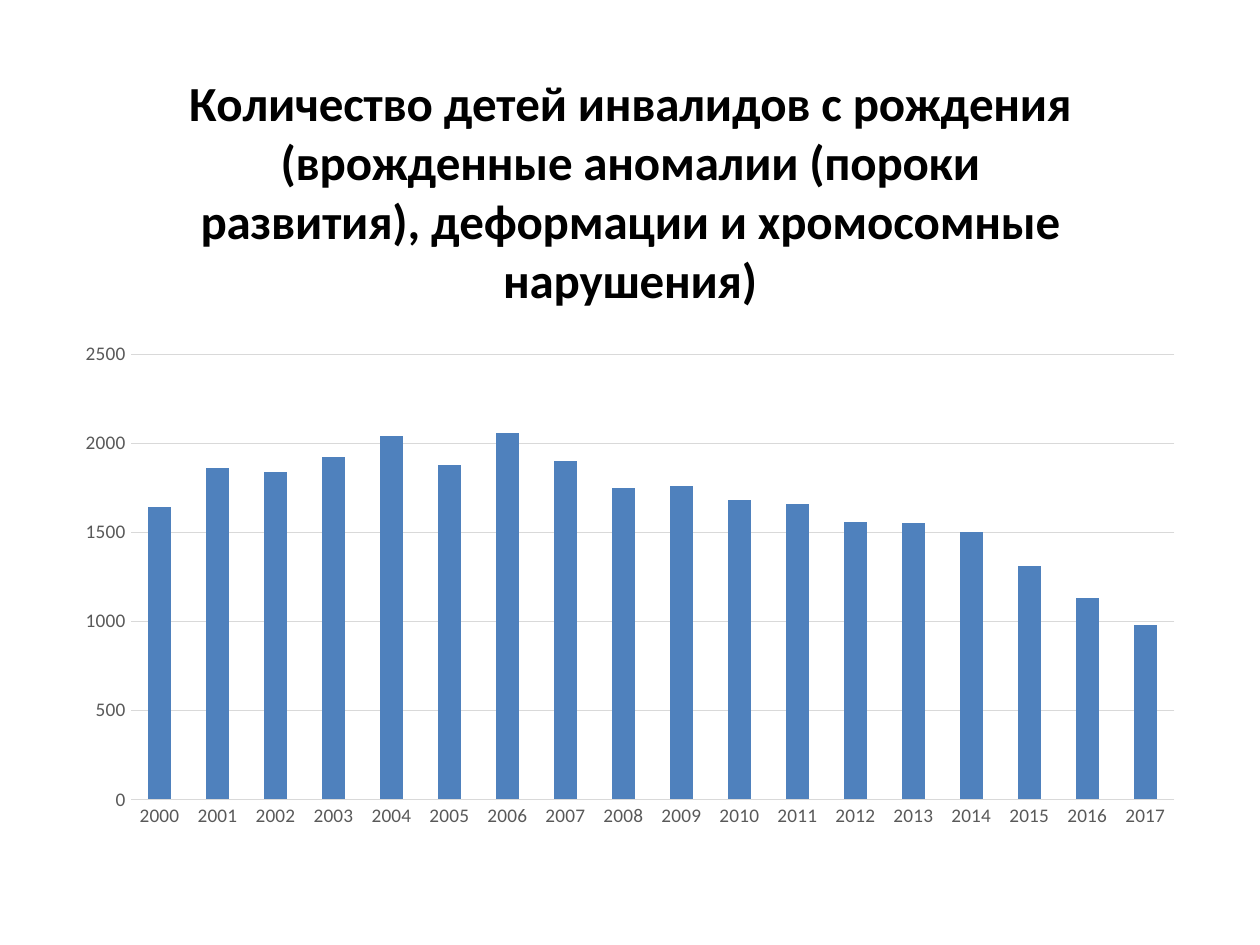
from pptx import Presentation
from pptx import util as u
from pptx.chart import data as cd
from pptx.dml.color import RGBColor
from pptx.enum import chart as ce

HUES = {"title": "000000", "label": "595959", "grid": "D9D9D9", "bar": "4F81BD"}
TITLE = ("Количество детей инвалидов с рождения (врожденные аномалии "
         "(пороки развития), деформации и хромосомные нарушения)")
COUNTS = [1640, 1860, 1840, 1920, 2040, 1880, 2060, 1900, 1750,
          1760, 1680, 1660, 1560, 1550, 1500, 1310, 1130, 980]
YEARS = [str(2000 + i) for i in range(len(COUNTS))]


def hue(name):
    """Return the named colour."""
    return RGBColor.from_string(HUES[name])


def style(font, size, color, bold=False):
    """Format a font."""
    font.name = "Calibri"
    font.size = u.Pt(size)
    font.bold = bold
    font.color.rgb = hue(color)


def put_text(frame, words, **form):
    """Write words into a text frame with the given format."""
    frame.text = words
    style(frame.paragraphs[0].runs[0].font, **form)


def set_axis(axis):
    """Give an axis plain labels without ticks or a line."""
    axis.major_tick_mark = axis.minor_tick_mark = ce.XL_TICK_MARK.NONE
    axis.format.line.fill.background()
    style(axis.tick_labels.font, 11, "label")


def add_bars(slide, left, top, width, height):
    """Place the yearly column chart in the given box."""
    data = cd.CategoryChartData()
    data.categories = YEARS
    data.add_series(TITLE, COUNTS)
    chart = slide.shapes.add_chart(
        ce.XL_CHART_TYPE.COLUMN_STACKED, left, top, width, height, data).chart
    style(chart.font, 10, "title")
    chart.has_legend = False
    chart.has_title = True
    put_text(chart.chart_title.text_frame, TITLE, size=28, color="title", bold=True)
    chart.chart_title.include_in_layout = False

    plot = chart.plots[0]
    plot.gap_width, plot.overlap = 150, 100
    plot.vary_by_categories = False
    fill = plot.series[0].format.fill
    fill.solid()
    fill.fore_color.rgb = hue("bar")

    set_axis(chart.category_axis)
    axis = chart.value_axis
    set_axis(axis)
    axis.minimum_scale, axis.maximum_scale, axis.major_unit = 0, 2500, 500
    axis.has_major_gridlines = True
    line = axis.major_gridlines.format.line
    line.width = u.Pt(0.75)
    line.color.rgb = hue("grid")


def main():
    """Build and save the slide."""
    deck = Presentation()
    deck.slide_width, deck.slide_height = u.Inches(10), u.Inches(7.5)
    slide = deck.slides.add_slide(deck.slide_layouts[6])
    add_bars(slide, u.Inches(0.5), u.Inches(0.3), u.Inches(9), u.Inches(6.4))
    deck.save("out.pptx")


if __name__ == "__main__":
    main()
